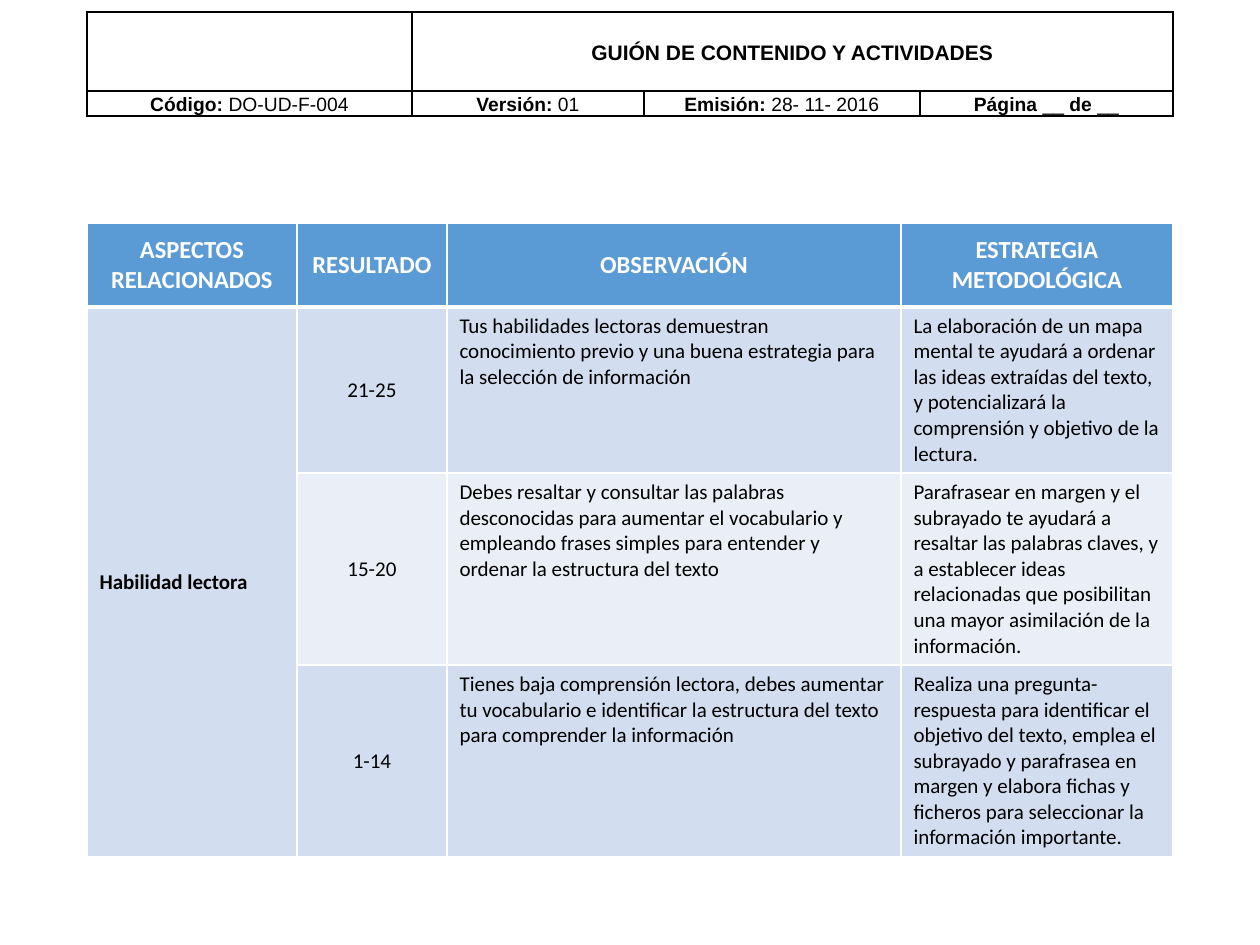
from dataclasses import dataclass

from lxml.etree import Element, SubElement
from pptx import Presentation
from pptx.dml.color import RGBColor as RGB
from pptx.enum.text import MSO_ANCHOR as Anchor, PP_ALIGN as Align
from pptx.oxml.ns import qn
from pptx.util import Emu, Pt

EMU_PER_INCH = 914400
PX_PER_INCH = 126


@dataclass(frozen=True)
class Theme:
    ink: str = "000000"
    paper: str = "FFFFFF"
    heading: str = "5B9BD5"
    band_dark: str = "D2DEEF"
    band_light: str = "EAEFF7"
    form_font: str = "Arial"
    body_font: str = "Calibri"
    title_size: int = 12
    code_size: int = 11
    heading_size: int = 14
    body_size: int = 12
    rule: int = 1
    heading_rule: int = 3


THEME = Theme()

FORM_TITLE = "GUIÓN DE CONTENIDO Y ACTIVIDADES"
FORM_CODES = [
    [("Código: ", True), ("DO-UD-F-004", False)],
    [("Versión:", True), (" 01", False)],
    [("Emisión:", True), (" 28- 11- 2016", False)],
    [("Página ", True), ("__ ", False), ("de ", True), ("__", False)],
]
HEADINGS = ["ASPECTOS RELACIONADOS", "RESULTADO", "OBSERVACIÓN", "ESTRATEGIA METODOLÓGICA"]
ASPECT = "Habilidad lectora"
RESULTS = [
    ("21-25",
     "Tus habilidades lectoras demuestran conocimiento previo y una buena estrategia "
     "para la selección de información",
     "La elaboración de un mapa mental te ayudará a ordenar las ideas extraídas del texto, "
     "y potencializará la comprensión y objetivo de la lectura."),
    ("15-20",
     "Debes resaltar y consultar las palabras desconocidas para aumentar el vocabulario y "
     "empleando frases simples para entender y ordenar la estructura del texto",
     "Parafrasear en margen y el subrayado te ayudará a resaltar las palabras claves, y a "
     "establecer ideas relacionadas que posibilitan una mayor asimilación de la información."),
    ("1-14",
     "Tienes baja comprensión lectora, debes aumentar tu vocabulario e identificar la "
     "estructura del texto para comprender la información",
     "Realiza una pregunta-respuesta para identificar el objetivo del texto, emplea el "
     "subrayado y parafrasea en margen y elabora fichas y ficheros para seleccionar la "
     "información importante."),
]


def px(length):
    return Emu(round(length * EMU_PER_INCH / PX_PER_INCH))


def set_borders(cell, color, top=THEME.rule, bottom=THEME.rule):
    widths = {"a:lnL": THEME.rule, "a:lnR": THEME.rule, "a:lnT": top, "a:lnB": bottom}
    properties = cell._tc.get_or_add_tcPr()
    for position, (side, width) in enumerate(widths.items()):
        line = Element(qn(side), w=str(Pt(width)))
        SubElement(SubElement(line, qn("a:solidFill")), qn("a:srgbClr"), val=color)
        properties.insert(position, line)


def add_grid(slide, box, columns, rows):
    left, top, width, height = map(px, box)
    grid = slide.shapes.add_table(len(rows), len(columns), left, top, width, height).table
    grid.first_row = grid.horz_banding = False
    for column, length in zip(grid.columns, columns):
        column.width = px(length)
    for row, length in zip(grid.rows, rows):
        row.height = px(length)
    return grid


def write(cell, pieces, font, size, color, bold=None, align=Align.LEFT, anchor=Anchor.MIDDLE):
    cell.vertical_anchor = anchor
    paragraph = cell.text_frame.paragraphs[0]
    paragraph.alignment = align
    for words, strong in pieces:
        run = paragraph.add_run()
        run.text = words
        if bold is None:
            run.font.bold = strong
    paragraph.font.name = font
    paragraph.font.size = Pt(size)
    paragraph.font.color.rgb = RGB.from_string(color)
    if bold is not None:
        paragraph.font.bold = bold
    return paragraph


def add_form_header(slide, box):
    form = add_grid(slide, box, [325, 232, 276, 253], [79, 25])
    for cell in form.iter_cells():
        cell.fill.background()
        cell.margin_left = cell.margin_right = px(6)
        cell.margin_top = cell.margin_bottom = 0
        set_borders(cell, THEME.ink)
    form.cell(0, 1).merge(form.cell(0, 3))
    title = write(form.cell(0, 1), [(FORM_TITLE, True)], THEME.form_font,
                  THEME.title_size, THEME.ink, True, Align.CENTER)
    title.line_spacing = 1.15
    for column, pieces in enumerate(FORM_CODES):
        code = write(form.cell(1, column), pieces, THEME.form_font,
                     THEME.code_size, THEME.ink, align=Align.CENTER)
        code.line_spacing = 1.15


def add_results(slide, box):
    results = add_grid(slide, box, [210, 150, 454, 272], [84, 166, 192, 192])
    bands = [THEME.heading, THEME.band_dark, THEME.band_light, THEME.band_dark]
    for row, band in enumerate(bands):
        for column in range(len(HEADINGS)):
            cell = results.cell(row, column)
            cell.fill.solid()
            cell.fill.fore_color.rgb = RGB.from_string(band)
            set_borders(cell, THEME.paper,
                        top=THEME.heading_rule if row == 1 else THEME.rule,
                        bottom=THEME.heading_rule if row == 0 else THEME.rule)
    for column, heading in enumerate(HEADINGS):
        write(results.cell(0, column), [(heading, True)], THEME.body_font,
              THEME.heading_size, THEME.paper, True, Align.CENTER)
    results.cell(1, 0).merge(results.cell(3, 0))
    write(results.cell(1, 0), [(ASPECT, True)], THEME.body_font,
          THEME.body_size, THEME.ink, True)
    for row, (score, *advice) in enumerate(RESULTS, 1):
        write(results.cell(row, 1), [(score, False)], THEME.body_font,
              THEME.body_size, THEME.ink, False, Align.CENTER)
        for column, words in enumerate(advice, 2):
            write(results.cell(row, column), [(words, False)], THEME.body_font,
                  THEME.body_size, THEME.ink, False, anchor=Anchor.TOP)


def main():
    deck = Presentation()
    deck.slide_width, deck.slide_height = px(1260), px(945)
    slide = deck.slides.add_slide(deck.slide_layouts[6])
    add_form_header(slide, (87, 12, 1086, 104))
    add_results(slide, (87, 223, 1086, 634))
    deck.save("out.pptx")


if __name__ == "__main__":
    main()
